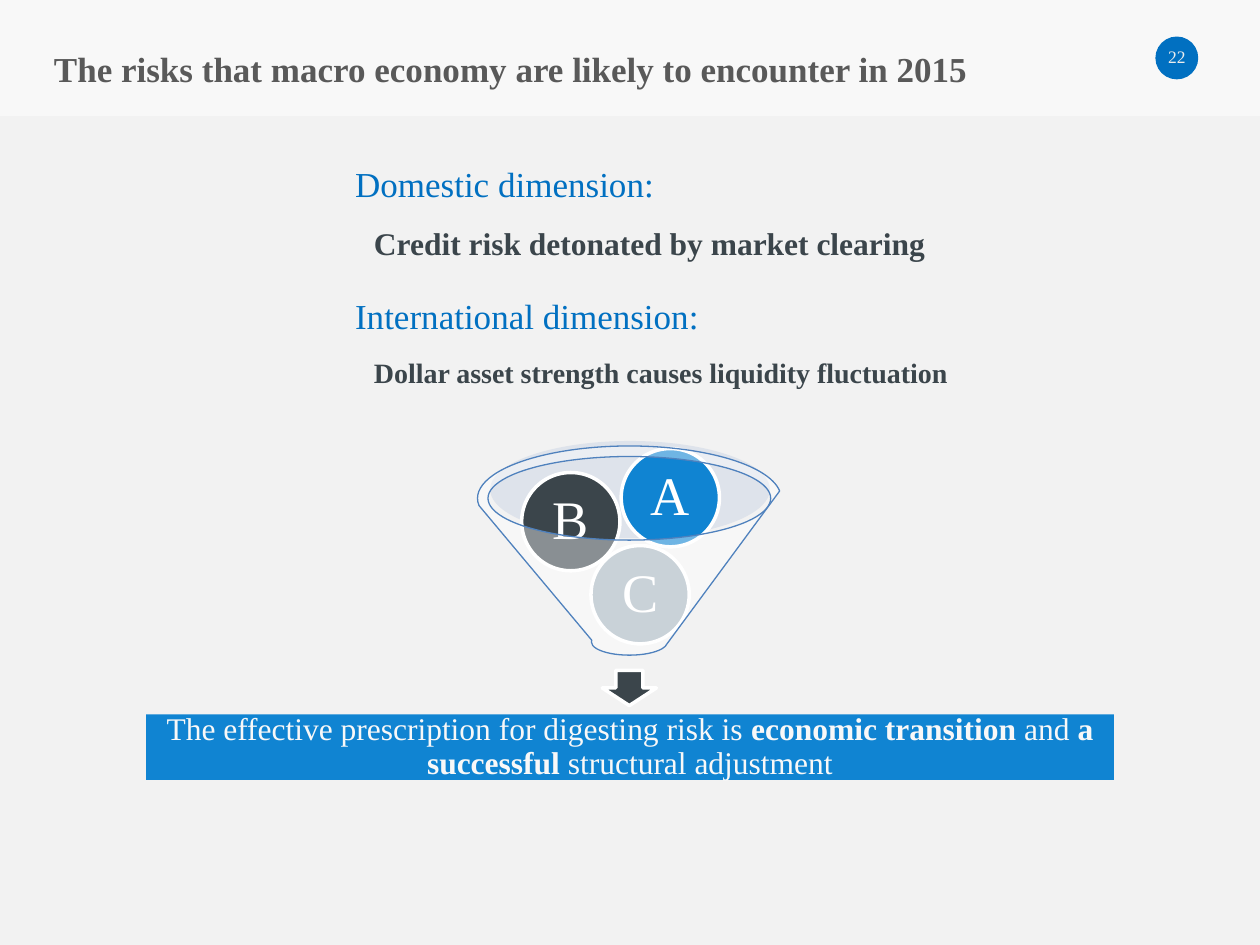
import pptx
import pptx.dml.color
import pptx.enum.shapes
import pptx.enum.text
import pptx.oxml
import pptx.oxml.ns
import pptx.util

Inches = pptx.util.Inches
Pt = pptx.util.Pt
SHAPE = pptx.enum.shapes.MSO_SHAPE
ALIGN = pptx.enum.text.PP_ALIGN
ANCHOR = pptx.enum.text.MSO_ANCHOR

FONT = "Times New Roman"
BLUE, BRIGHT, DARK, GREY = "0170C1", "1084D2", "3B454B", "A6B4BF"
WHITE, PALE = "FFFFFF", "F8F8F8"


def colour(value):
    return pptx.dml.color.RGBColor.from_string(value)


class SlideBuilder:
    """Hold the deck style and current page, and add each kind of element."""

    def __init__(self, deck, background):
        self.page = deck.slides.add_slide(deck.slide_layouts[6])
        self.page.background.fill.solid()
        self.page.background.fill.fore_color.rgb = colour(background)

    def shape(self, kind, place, fill, line=None, width=2, alpha=None):
        shape = self.page.shapes.add_shape(kind, *map(Inches, place))
        shape.shadow.inherit = False
        shape.fill.solid()
        shape.fill.fore_color.rgb = colour(fill)
        if alpha is not None:
            tag = pptx.oxml.ns.qn("a:srgbClr")
            node = next(shape.element.spPr.iter(tag))
            namespace = pptx.oxml.ns.nsdecls("a")
            node.append(pptx.oxml.parse_xml(f'<a:alpha {namespace} val="{alpha * 1000}"/>'))
        if line:
            shape.line.color.rgb = colour(line)
            shape.line.width = Pt(width)
        else:
            shape.line.fill.background()
        return shape

    def fill_text(self, box, spans, size, ink, align=ALIGN.LEFT, spacing=1.0,
                  anchor=ANCHOR.TOP, insets=(0.1, 0.05)):
        frame = box.text_frame
        frame.word_wrap = True
        frame.vertical_anchor = anchor
        frame.margin_left = frame.margin_right = Inches(insets[0])
        frame.margin_top = frame.margin_bottom = Inches(insets[1])
        para = frame.paragraphs[0]
        para.alignment = align
        para.line_spacing = spacing
        for text, bold in spans:
            span = para.add_run()
            span.text = text
            span.font.name = FONT
            span.font.size = Pt(size)
            span.font.bold = bold
            span.font.color.rgb = colour(ink)

    def text(self, place, text, size, ink, bold=False, spacing=1.0):
        box = self.page.shapes.add_textbox(*map(Inches, place))
        self.fill_text(box, [(text, bold)], size, ink, spacing=spacing)

    def label(self, shape, spans, size, ink, insets=(0, 0)):
        self.fill_text(shape, spans, size, ink, ALIGN.CENTER, 0.9, ANCHOR.MIDDLE, insets)


def main():
    deck = pptx.Presentation()
    deck.slide_width, deck.slide_height = Inches(10), Inches(7.5)
    slide = SlideBuilder(deck, "F2F2F2")

    slide.shape(SHAPE.RECTANGLE, (0, 0, 10, 0.92), PALE)
    slide.text((0.33, 0.33, 8.45, 0.44),
               "The risks that macro economy are likely to encounter in 2015",
               20, "595959", bold=True)
    badge = slide.shape(SHAPE.OVAL, (9.17, 0.29, 0.34, 0.34), BLUE)
    slide.label(badge, [("22", False)], 10, "EDEDED")

    dimensions = [
        (1.24, "Domestic dimension:", "Credit risk detonated by market clearing", 18),
        (2.29, "International dimension:",
         "Dollar asset strength causes liquidity fluctuation", 16),
    ]
    for top, heading, risk, size in dimensions:
        slide.text((2.72, top, 3.94, 0.44), heading, 20, BLUE)
        slide.text((2.87, top + 0.43, 4.9, 0.43), risk, size, DARK, True, 1.2)

    slide.shape(SHAPE.OVAL, (3.89, 3.5, 2.22, 0.77), "C2CDE1", alpha=40)
    slide.shape(SHAPE.DOWN_ARROW, (4.78, 5.32, 0.43, 0.28), DARK, WHITE)
    banner = slide.shape(SHAPE.RECTANGLE, (1.16, 5.67, 7.68, 0.52), BRIGHT)
    slide.label(banner, [
        ("The effective prescription for digesting risk is ", False),
        ("economic transition ", True),
        ("and ", False),
        ("a successful ", True),
        ("structural adjustment", False),
    ], 18, PALE, (0.14, 0))

    balls = [("C", 4.69, 4.33, GREY), ("B", 4.14, 3.75, DARK), ("A", 4.93, 3.56, BRIGHT)]
    for letter, left, top, fill in balls:
        ball = slide.shape(SHAPE.OVAL, (left, top, 0.78, 0.78), fill, WHITE)
        slide.label(ball, [(letter, False)], 31, WHITE)
    slide.shape(SHAPE.FUNNEL, (3.79, 3.54, 2.41, 1.66), WHITE, "4F81BD", 0.75, alpha=40)

    deck.save("out.pptx")


if __name__ == "__main__":
    main()
